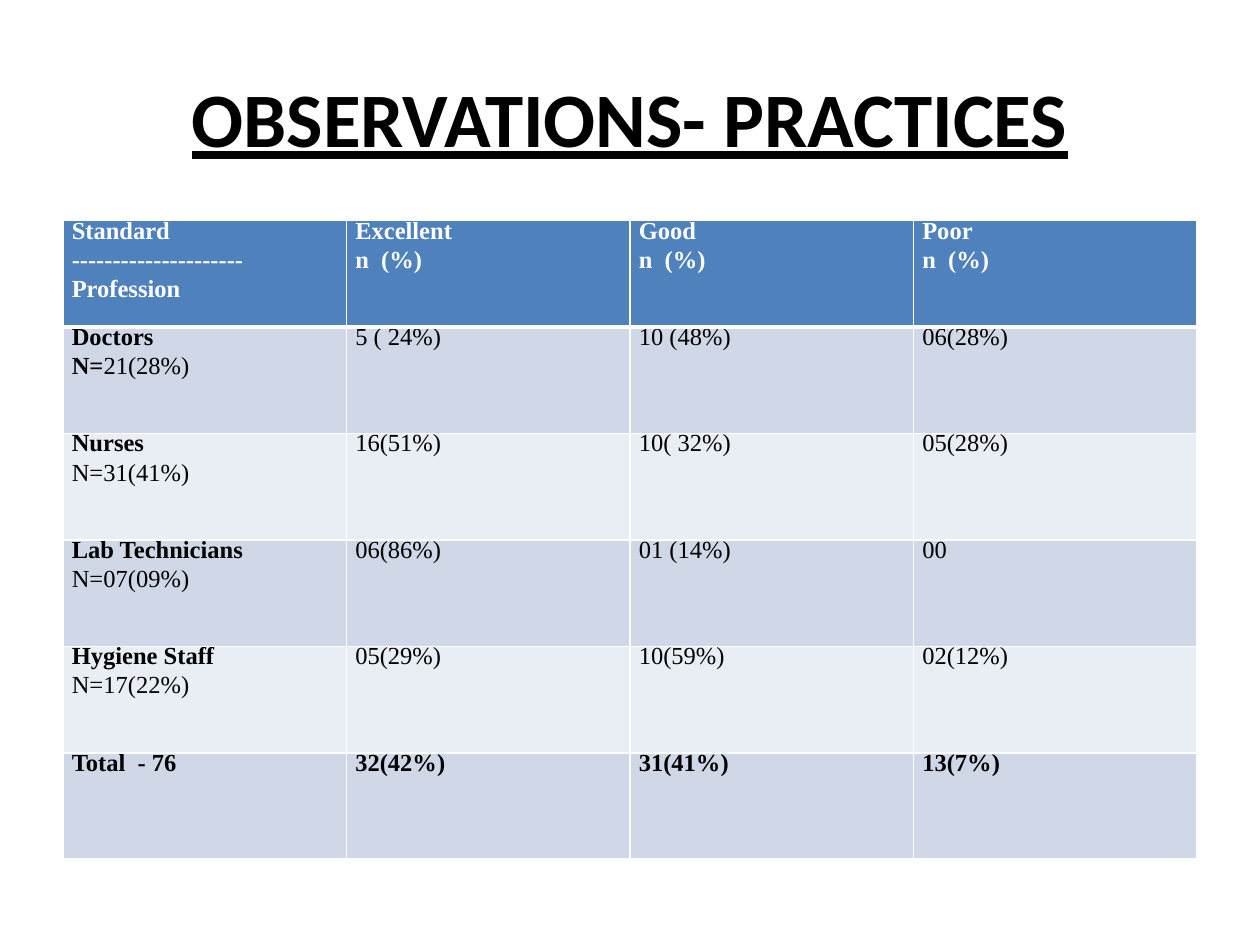
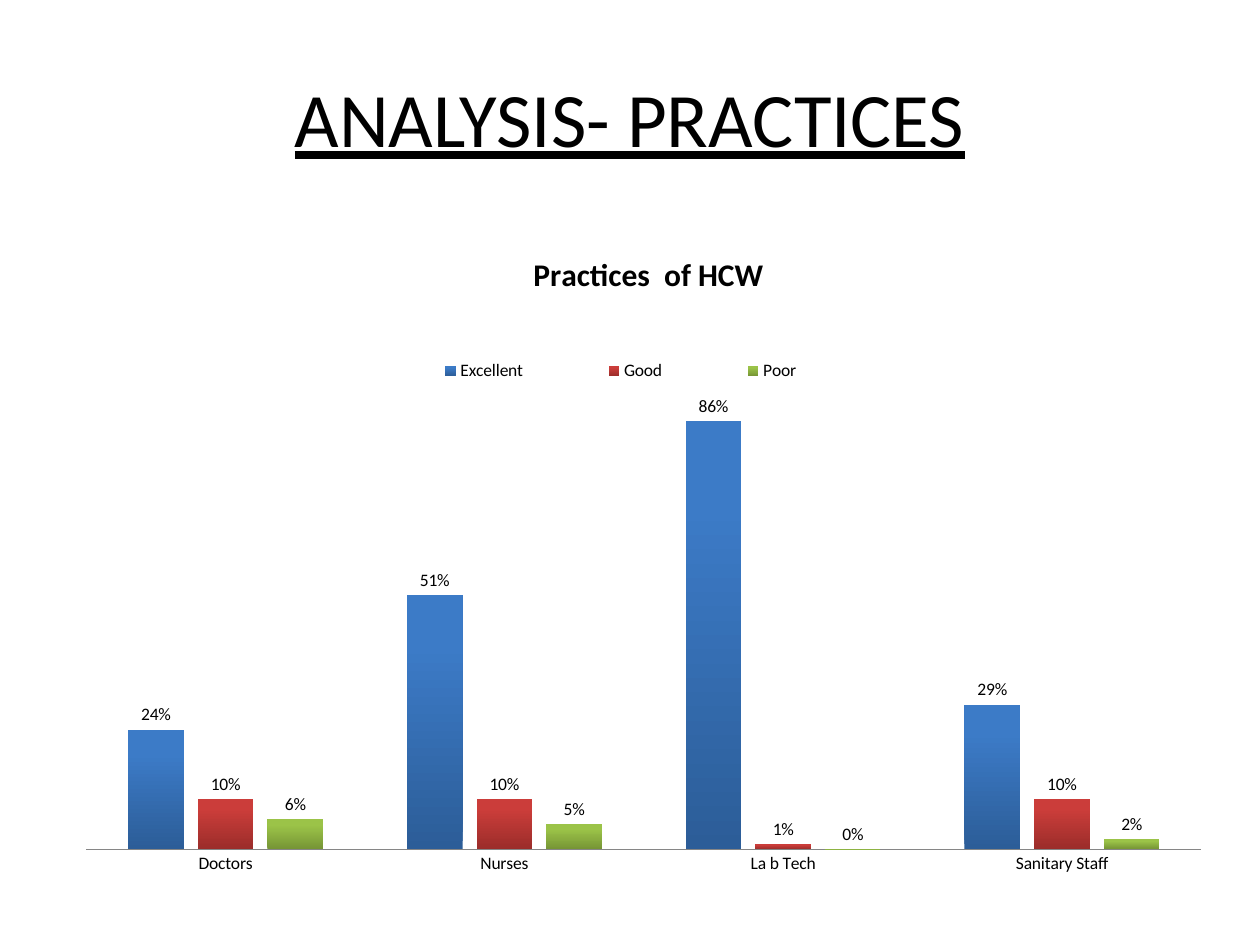
from lxml.etree import SubElement
from pptx import Presentation
from pptx.chart.data import CategoryChartData
from pptx.dml.color import RGBColor
from pptx.enum.chart import XL_CHART_TYPE as ChartType, XL_LABEL_POSITION as LabelPosition
from pptx.enum.chart import XL_LEGEND_POSITION as LegendPosition, XL_TICK_MARK as TickMark
from pptx.enum.text import MSO_ANCHOR as Anchor, PP_ALIGN as Align
from pptx.oxml import parse_xml
from pptx.oxml.ns import nsdecls, qn
from pptx.util import Inches, Pt

BLACK, WHITE, AXIS_GRAY = "000000", "FFFFFF", "868686"
HEADER_BLUE, BANDS = "4F81BD", ("D0D8E8", "E9EDF4")
HEADING_FONT, TABLE_FONT = "Calibri", "Times New Roman"
TITLE_BOX = (0.5, 0.3, 9, 1.25)
TABLE_BOX = (0.5, 1.75, 9, 5.07)
CHART_BOX = (0.5, 1.75, 9.22, 5.31)

# Text between asterisks is bold
TABLE_ROWS = [
    ["*Standard*\n*---------------------*\n*Profession*", "*Excellent*\n*n  (%)*",
     "*Good*\n*n  (%)*", "*Poor*\n*n  (%)*"],
    ["*Doctors*\n*N=*21(28%)", "5 ( 24%)", "10 (48%)", "06(28%)"],
    ["*Nurses*\nN=31(41%)", "16(51%)", "10( 32%)", "05(28%)"],
    ["*Lab Technicians*\nN=07(09%)", "06(86%)", "01 (14%)", "00"],
    ["*Hygiene Staff*\nN=17(22%)", "05(29%)", "10(59%)", "02(12%)"],
    ["*Total  - 76*", "*32(42%)*", "*31(41%)*", "*13(7%)*"],
]
CATEGORIES = ["Doctors", "Nurses", "La b Tech", "Sanitary Staff"]
# name, values, colour at the foot of a bar, colour at its top
SERIES = [
    ("Excellent", (0.24, 0.51, 0.86, 0.29), "2C5D98", "3C7BC7"),
    ("Good", (0.1, 0.1, 0.01, 0.1), "9B2D2A", "CB3D3A"),
    ("Poor", (0.06, 0.05, 0, 0.02), "769535", "9BC348"),
]


def color(hex_code):
    return RGBColor.from_string(hex_code)


def set_font(font, size, name=HEADING_FONT, ink=BLACK, bold=False, underline=False):
    font.size, font.name = Pt(size), name
    font.bold, font.underline = bold, underline
    font.color.rgb = color(ink)


def write(paragraph, text, **font_format):
    run = paragraph.add_run()
    run.text = text
    set_font(run.font, **font_format)


def add_title(slide, text, box, bold=False):
    frame = slide.shapes.add_textbox(*map(Inches, box)).text_frame
    frame.word_wrap = True
    frame.vertical_anchor = Anchor.MIDDLE
    paragraph = frame.paragraphs[0]
    paragraph.alignment = Align.CENTER
    write(paragraph, text, size=44, bold=bold, underline=True)


def set_borders(cell, bottom_width):
    properties = cell._tc.get_or_add_tcPr()
    widths = {"lnL": 1, "lnR": 1, "lnT": 1, "lnB": bottom_width}
    for position, (tag, width) in enumerate(widths.items()):
        properties.insert(position, parse_xml(
            f'<a:{tag} {nsdecls("a")} w="{Pt(width)}"><a:solidFill>'
            f'<a:srgbClr val="{WHITE}"/></a:solidFill></a:{tag}>'))


def fill_cell(cell, text, fill, ink):
    cell.fill.solid()
    cell.fill.fore_color.rgb = color(fill)
    cell.margin_left = cell.margin_right = Inches(0.07)
    cell.margin_top = cell.margin_bottom = 0
    frame = cell.text_frame
    for number, line in enumerate(text.split("\n")):
        paragraph = frame.add_paragraph() if number else frame.paragraphs[0]
        paragraph.line_spacing, paragraph.space_before = Pt(13.6), Pt(3)
        for piece_number, piece in enumerate(line.split("*")):
            if piece:
                write(paragraph, piece, size=14, name=TABLE_FONT, ink=ink,
                      bold=piece_number % 2 == 1)


def add_practice_table(slide, box):
    frame = slide.shapes.add_table(len(TABLE_ROWS), len(TABLE_ROWS[0]), *map(Inches, box))
    table = frame.table
    for row in table.rows:
        row.height = Inches(box[3] / len(TABLE_ROWS))
    for row_number, texts in enumerate(TABLE_ROWS):
        is_header = row_number == 0
        fill = HEADER_BLUE if is_header else BANDS[(row_number - 1) % 2]
        for column_number, text in enumerate(texts):
            cell = table.cell(row_number, column_number)
            fill_cell(cell, text, fill, WHITE if is_header else BLACK)
            set_borders(cell, 3 if is_header else 1)


def place(element, x, y, width=None, height=None, inner=False):
    """Give a chart part a fixed place, in fractions of the chart."""
    old_layout = element.find(qn("c:layout"))
    if old_layout is not None:
        element.remove(old_layout)
    layout = parse_xml(f'<c:layout {nsdecls("c")}><c:manualLayout/></c:layout>')
    settings = {"layoutTarget": "inner" if inner else None, "xMode": "edge", "yMode": "edge",
                "x": x, "y": y, "w": width, "h": height}
    for tag, value in settings.items():
        if value is not None:
            SubElement(layout[0], qn(f"c:{tag}")).set("val", str(value))
    before = {"plotArea": None, "title": "c:tx", "legend": "c:legendPos"}
    anchor = before[element.tag.split("}")[1]]
    if anchor is None:
        element.insert(0, layout)
    else:
        element.find(qn(anchor)).addnext(layout)


def style_series(series, foot, top):
    fill = series.format.fill
    fill.gradient()
    fill.gradient_angle = 90
    for stop, position, shade in zip(fill.gradient_stops, (0, 0.8), (foot, top)):
        stop.position = position
        stop.color.rgb = color(shade)
    labels = series.data_labels
    labels.show_value = True
    labels.number_format, labels.number_format_is_linked = "0%", False
    labels.position = LabelPosition.OUTSIDE_END
    set_font(labels.font, 10)


def add_practice_chart(slide, box):
    data = CategoryChartData(number_format="0%")
    data.categories = CATEGORIES
    for name, values, *_ in SERIES:
        data.add_series(name, values)
    chart = slide.shapes.add_chart(ChartType.COLUMN_CLUSTERED, *map(Inches, box), data).chart
    set_font(chart.font, 10)

    chart.has_title = True
    write(chart.chart_title.text_frame.paragraphs[0], "Practices  of HCW", size=18, bold=True)
    place(chart.chart_title._element, 0.4, 0.04)

    chart.has_legend = True
    chart.legend.position = LegendPosition.TOP
    chart.legend.include_in_layout = False
    place(chart.legend._element, 0.26, 0.2, 0.44, 0.05)

    chart.value_axis.visible = False
    chart.value_axis.has_major_gridlines = False
    chart.value_axis.minimum_scale, chart.value_axis.maximum_scale = 0, 0.9
    chart.category_axis.major_tick_mark = TickMark.NONE
    chart.category_axis.format.line.color.rgb = color(AXIS_GRAY)

    plot = chart.plots[0]
    plot.gap_width, plot.overlap, plot.vary_by_categories = 150, -25, False
    place(chart._chartSpace.chart.plotArea, 0.02, 0.27, 0.96, 0.67, inner=True)
    for series, (_, _, foot, top) in zip(plot.series, SERIES):
        style_series(series, foot, top)


def main():
    presentation = Presentation()
    presentation.slide_width, presentation.slide_height = Inches(10), Inches(7.5)
    blank = presentation.slide_layouts[6]

    observations = presentation.slides.add_slide(blank)
    add_title(observations, "OBSERVATIONS- PRACTICES", TITLE_BOX, bold=True)
    add_practice_table(observations, TABLE_BOX)

    analysis = presentation.slides.add_slide(blank)
    add_title(analysis, "ANALYSIS- PRACTICES", TITLE_BOX)
    add_practice_chart(analysis, CHART_BOX)

    presentation.save("out.pptx")


if __name__ == "__main__":
    main()
